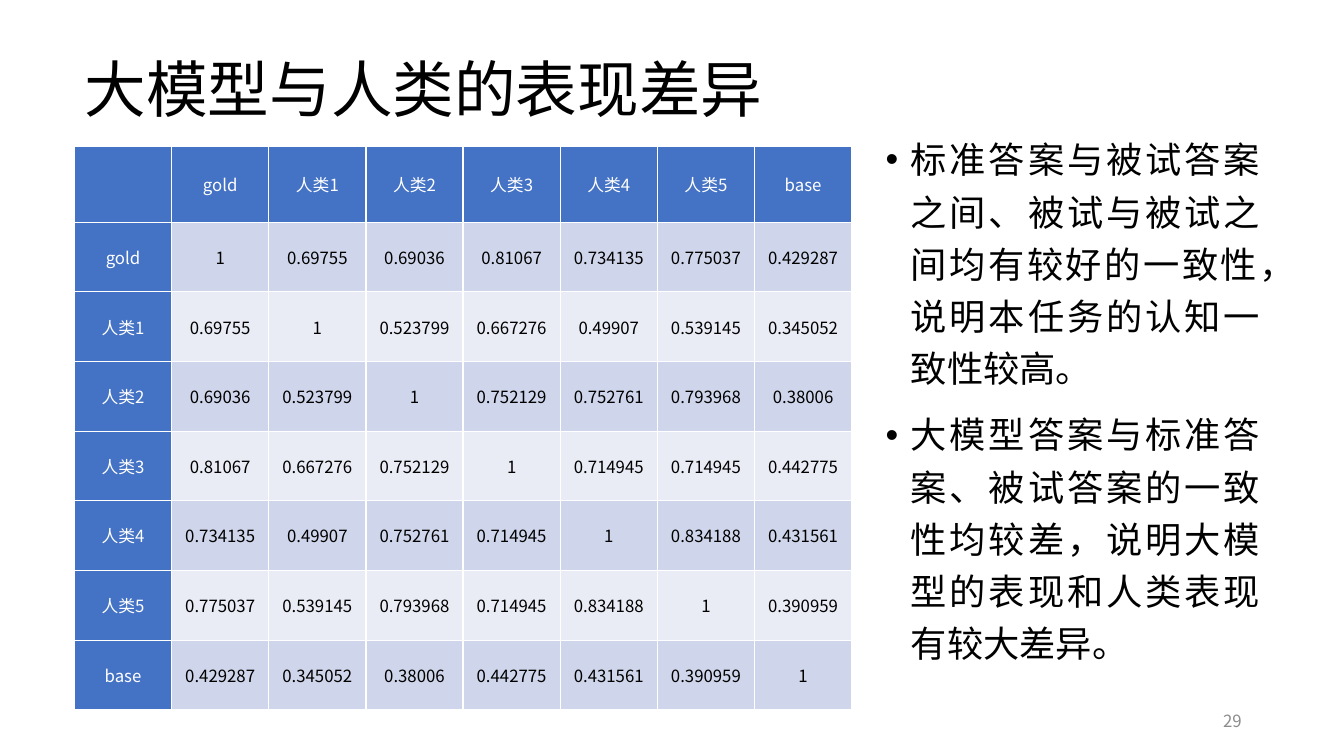
from lxml.etree import SubElement
from pptx import Presentation
from pptx.dml.color import RGBColor
from pptx.enum.text import MSO_ANCHOR, PP_ALIGN
from pptx.oxml.ns import qn
from pptx.util import Pt

FONT = "Noto Sans CJK SC"


def color(value):
    return RGBColor.from_string(value)


def write(paragraph, text, size, text_color, formats):
    for name, value in formats.items():
        setattr(paragraph, name, value)
    run = paragraph.add_run()
    run.text = text
    run.font.size = Pt(size)
    run.font.name = FONT
    run.font.color.rgb = color(text_color)
    SubElement(run.font._element, qn("a:ea"), typeface=FONT)


presentation = Presentation()
presentation.slide_width = Pt(960)
presentation.slide_height = Pt(540)
slide = presentation.slides.add_slide(presentation.slide_layouts[6])

labels = [
    ((678, 500.5, 216, 29), "29", 12, "8C8C8C", {"alignment": PP_ALIGN.RIGHT}),
    ((53.5, 33, 704, 66), "大模型与人类的表现差异", 44, "000000", {"line_spacing": 0.9}),
]
for box, text, size, text_color, formats in labels:
    shape = slide.shapes.add_textbox(*map(Pt, box))
    shape.text_frame.word_wrap = True
    shape.text_frame.vertical_anchor = MSO_ANCHOR.MIDDLE
    write(shape.text_frame.paragraphs[0], text, size, text_color, formats)

names = ["gold", "人类1", "人类2", "人类3", "人类4", "人类5", "base"]
scores = [
    ["1", "0.69755", "0.69036", "0.81067", "0.734135", "0.775037", "0.429287"],
    ["0.69755", "1", "0.523799", "0.667276", "0.49907", "0.539145", "0.345052"],
    ["0.69036", "0.523799", "1", "0.752129", "0.752761", "0.793968", "0.38006"],
    ["0.81067", "0.667276", "0.752129", "1", "0.714945", "0.714945", "0.442775"],
    ["0.734135", "0.49907", "0.752761", "0.714945", "1", "0.834188", "0.431561"],
    ["0.775037", "0.539145", "0.793968", "0.714945", "0.834188", "1", "0.390959"],
    ["0.429287", "0.345052", "0.38006", "0.442775", "0.431561", "0.390959", "1"],
]
rows = [["", *names]] + [[name, *values] for name, values in zip(names, scores)]
cell_formats = {
    "vertical_anchor": MSO_ANCHOR.MIDDLE,
    "margin_left": Pt(5),
    "margin_right": Pt(5),
    "margin_top": 0,
    "margin_bottom": 0,
}

table = slide.shapes.add_table(8, 8, Pt(53.2), Pt(104.75), Pt(555.2), Pt(402.25)).table
for column in table.columns:
    column.width = Pt(69.4)
for row_index, values in enumerate(rows):
    table.rows[row_index].height = Pt(49.75 if row_index else 54)
    for column_index, text in enumerate(values):
        cell = table.cell(row_index, column_index)
        for name, value in cell_formats.items():
            setattr(cell, name, value)
        heading = row_index == 0 or column_index == 0
        for side in ("lnL", "lnR", "lnT", "lnB"):
            border = SubElement(cell._tc.get_or_add_tcPr(), qn(f"a:{side}"), w=str(Pt(1)))
            SubElement(SubElement(border, qn("a:solidFill")), qn("a:srgbClr"), val="FFFFFF")
        cell.fill.solid()
        band = "CFD5EA" if row_index % 2 else "E9EBF5"
        cell.fill.fore_color.rgb = color("4472C4" if heading else band)
        if text:
            write(cell.text_frame.paragraphs[0], text, 12,
                  "FFFFFF" if heading else "000000", {"alignment": PP_ALIGN.CENTER})

findings = [
    "标准答案与被试答案之间、被试与被试之间均有较好的一致性，说明本任务的认知一致性较高。",
    "大模型答案与标准答案、被试答案的一致性均较差，说明大模型的表现和人类表现有较大差异。",
]
finding_formats = {
    "alignment": PP_ALIGN.JUSTIFY,
    "line_spacing": 1.2,
    "space_before": Pt(10),
}
frame = slide.shapes.add_textbox(Pt(625.5), Pt(88.5), Pt(281.5), Pt(409.7)).text_frame
frame.word_wrap = True
for index, text in enumerate(findings):
    paragraph = frame.add_paragraph() if index else frame.paragraphs[0]
    write(paragraph, text, 25.9, "000000", finding_formats)
    properties = paragraph._p.get_or_add_pPr()
    properties.set("marL", str(Pt(18)))
    properties.set("indent", str(-Pt(18)))
    SubElement(properties, qn("a:buFont"), typeface="Arial")
    SubElement(properties, qn("a:buChar"), char="•")

presentation.save("out.pptx")
